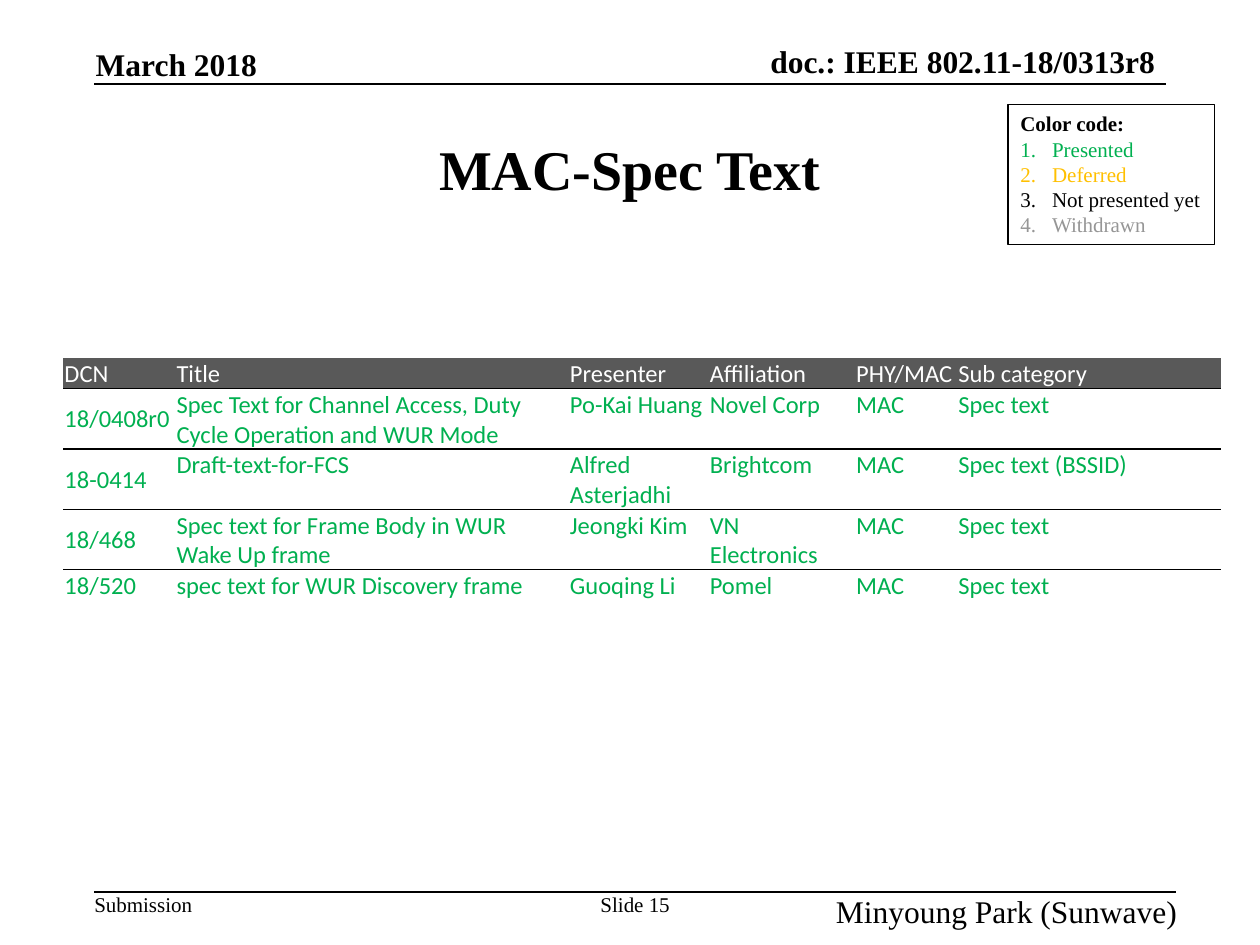
"""Build the MAC specification text slide with its status table and colour legend."""
from lxml import etree
from pptx import Presentation
from pptx import util as u
from pptx.dml.color import RGBColor
from pptx.enum import shapes, text
from pptx.oxml import ns

BLACK = RGBColor(0x00, 0x00, 0x00)
WHITE = RGBColor(0xFF, 0xFF, 0xFF)
GREEN = RGBColor(0x00, 0xB0, 0x50)
AMBER = RGBColor(0xFF, 0xC0, 0x00)
GREY = RGBColor(0x96, 0x96, 0x96)
CHARCOAL = RGBColor(0x59, 0x59, 0x59)
SERIF = "Times New Roman"
LEFT, CENTER, RIGHT = text.PP_ALIGN.LEFT, text.PP_ALIGN.CENTER, text.PP_ALIGN.RIGHT
TOP, MIDDLE, BOTTOM = text.MSO_ANCHOR.TOP, text.MSO_ANCHOR.MIDDLE, text.MSO_ANCHOR.BOTTOM


def style(para, size, color=BLACK, bold=False, name=SERIF):
    for span in para.runs:
        span.font.size = u.Pt(size)
        span.font.name = name
        span.font.bold = bold
        span.font.color.rgb = color


def add_border(cell, side, visible):
    line = etree.Element(ns.qn(f"a:{side}"), w=str(u.Pt(1)))
    if visible:
        fill = etree.SubElement(line, ns.qn("a:solidFill"))
        etree.SubElement(fill, ns.qn("a:srgbClr"), val=str(BLACK))
    else:
        etree.SubElement(line, ns.qn("a:noFill"))
    cell._tc.get_or_add_tcPr().append(line)


deck = Presentation()
deck.slide_width, deck.slide_height = u.Cm(25.4), u.Cm(19.05)
page = deck.slides.add_slide(deck.slide_layouts[6])

labels = [
    ("doc.: IEEE 802.11-18/0313r8", 14.17, 0.84, 9.12, 0.76, 18, True, RIGHT, BOTTOM),
    ("March 2018", 1.93, 0.91, 3.73, 0.76, 18, True, LEFT, BOTTOM),
    ("MAC-Spec Text", 1.9, 1.9, 21.6, 2.97, 32, True, CENTER, MIDDLE),
    ("Submission", 1.9, 17.98, 1.98, 0.51, 12, False, LEFT, TOP),
    ("Slide 15", 12.07, 17.98, 1.47, 0.51, 12, False, CENTER, TOP),
    ("Minyoung Park (Sunwave)", 16.08, 17.98, 7.65, 0.51, 18, False, RIGHT, TOP),
]
for words, left, top, width, height, size, bold, align, anchor in labels:
    box = page.shapes.add_textbox(u.Cm(left), u.Cm(top), u.Cm(width), u.Cm(height))
    frame = box.text_frame
    frame.margin_left = frame.margin_right = frame.margin_top = frame.margin_bottom = 0
    frame.word_wrap = False
    frame.vertical_anchor = anchor
    frame.text = words
    frame.paragraphs[0].alignment = align
    style(frame.paragraphs[0], size, bold=bold)

for right, top in [(23.5, 1.7), (23.7, 17.98)]:
    rule = page.shapes.add_connector(
        shapes.MSO_CONNECTOR.STRAIGHT, u.Cm(1.9), u.Cm(top), u.Cm(right), u.Cm(top))
    rule.line.color.rgb = BLACK
    rule.line.width = u.Pt(1)
    etree.SubElement(rule._element.spPr, ns.qn("a:effectLst"))

legend = page.shapes.add_textbox(u.Cm(20.32), u.Cm(2.11), u.Cm(4.17), u.Cm(2.82))
legend.line.color.rgb = BLACK
legend.line.width = u.Pt(0.75)
legend.text_frame.word_wrap = False
legend.text_frame.text = "Color code:"
style(legend.text_frame.paragraphs[0], 12, bold=True)
statuses = [("Presented", GREEN), ("Deferred", AMBER),
            ("Not presented yet", BLACK), ("Withdrawn", GREY)]
for status, color in statuses:
    para = legend.text_frame.add_paragraph()
    props = para._p.get_or_add_pPr()
    props.set("marL", str(u.Cm(0.64)))
    props.set("indent", str(-u.Cm(0.64)))
    etree.SubElement(props, ns.qn("a:buFont"), typeface="+mj-lt")
    etree.SubElement(props, ns.qn("a:buAutoNum"), type="arabicPeriod")
    para.text = status
    style(para, 12, color)

rows = [
    ("DCN", "Title", "Presenter", "Affiliation", "PHY/MAC", "Sub category"),
    ("18/0408r0", "Spec Text for Channel Access, Duty Cycle Operation and WUR Mode",
     "Po-Kai Huang", "Novel Corp", "MAC", "Spec text"),
    ("18-0414", "Draft-text-for-FCS", "Alfred Asterjadhi", "Brightcom", "MAC",
     "Spec text (BSSID)"),
    ("18/468", "Spec text for Frame Body in WUR Wake Up frame", "Jeongki Kim",
     "VN Electronics", "MAC", "Spec text"),
    ("18/520", "spec text for WUR Discovery frame", "Guoqing Li", "Pomel", "MAC",
     "Spec text"),
]
widths = [2.26, 7.93, 2.82, 2.95, 2.06, 5.33]
heights = [0.6, 1.2, 1.2, 1.2, 0.6]
table = page.shapes.add_table(len(rows), len(widths), u.Cm(1.27), u.Cm(7.21),
                              u.Cm(sum(widths)), u.Cm(sum(heights))).table
for column, width in zip(table.columns, widths):
    column.width = u.Cm(width)
for row, height in zip(table.rows, heights):
    row.height = u.Cm(height)

for r, record in enumerate(rows):
    for c, words in enumerate(record):
        cell = table.cell(r, c)
        cell.margin_left = cell.margin_right = cell.margin_top = u.Cm(0.03)
        cell.margin_bottom = 0
        cell.vertical_anchor = MIDDLE if c == 0 else TOP
        cell.text = words
        style(cell.text_frame.paragraphs[0], 14, GREEN if r else WHITE, name="Calibri")
        borders = {"lnL": False, "lnR": False, "lnT": r > 0, "lnB": r < len(rows) - 1}
        for side, visible in borders.items():
            add_border(cell, side, visible)
        if r:
            cell.fill.background()
        else:
            cell.fill.solid()
            cell.fill.fore_color.rgb = CHARCOAL

deck.save("out.pptx")
